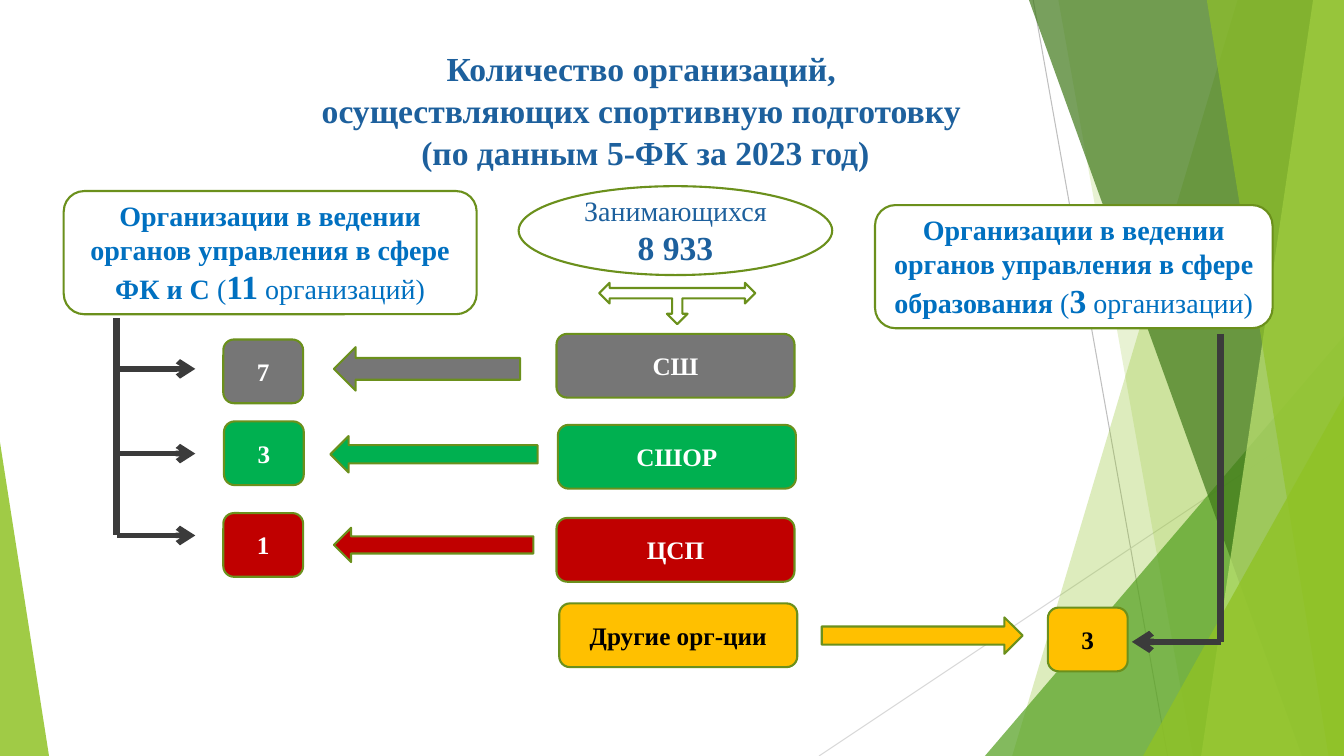
from dataclasses import dataclass

from lxml import etree
from pptx import Presentation
from pptx.dml.color import RGBColor
from pptx.enum import shapes, text
from pptx.oxml import ns
from pptx.util import Pt

KIND = shapes.MSO_SHAPE


@dataclass(frozen=True)
class Theme:
    font: str = "Times New Roman"
    title: str = "1D609D"
    head: str = "0070C0"
    edge: str = "6B901C"
    rod: str = "3B3B3B"
    white: str = "FFFFFF"
    black: str = "000000"
    gray: str = "767676"
    green: str = "00B050"
    red: str = "C00000"
    gold: str = "FFC000"
    lime: str = "90C226"
    leaf: str = "54A021"
    moss: str = "3F7819"
    pale: str = "C0E474"
    big: int = 24
    mid: int = 20
    small: int = 18


T = Theme()


def rgb(code):
    return RGBColor.from_string(code)


def write(frame, paras, size, color, bold=True, anchor=text.MSO_ANCHOR.MIDDLE, gap=None):
    """Each paragraph is a list of (words, changes) runs; a newline breaks a line."""
    frame.word_wrap = True
    frame.auto_size = text.MSO_AUTO_SIZE.NONE
    frame.vertical_anchor = anchor
    for i, runs in enumerate(paras):
        para = frame.paragraphs[0] if i == 0 else frame.add_paragraph()
        para.alignment = text.PP_ALIGN.CENTER
        para.line_spacing = gap
        for words, new in runs:
            for j, line in enumerate(words.split("\n")):
                if j:
                    para.add_line_break()
                run = para.add_run()
                run.text = line
                font = run.font
                font.name = T.font
                font.size = Pt(new.get("size", size))
                font.bold = new.get("bold", bold)
                font.color.rgb = rgb(color)


def paint(item, fill, alpha=None, edge=None):
    item.shadow.inherit = False
    item.fill.solid()
    item.fill.fore_color.rgb = rgb(fill)
    if alpha:
        tint = item.element.spPr.find(".//" + ns.qn("a:srgbClr"))
        etree.SubElement(tint, ns.qn("a:alpha"), val=str(alpha * 1000))
    if edge:
        item.line.color.rgb = rgb(edge)
        item.line.width = Pt(1.5)
    else:
        item.line.fill.background()
    return item


def block(slide, kind, box, fill=T.white, **look):
    item = slide.shapes.add_shape(kind, *map(Pt, box))
    return paint(item, fill, **{"edge": T.edge, **look})


def rule(slide, start, end, color, width, arrow=False):
    line = slide.shapes.add_connector(
        shapes.MSO_CONNECTOR.STRAIGHT, *map(Pt, (*start, *end)))
    line.line.color.rgb = rgb(color)
    line.line.width = Pt(width)
    if arrow:
        etree.SubElement(line.line._get_or_add_ln(), ns.qn("a:tailEnd"), type="arrow")
    etree.SubElement(line.element.spPr, ns.qn("a:effectLst"))


def facets(slide, box):
    """Green translucent bands along the right side and a wedge at the left."""
    left, top, wide, high = box
    right, foot = left + wide, top + high

    def band(upper, lower, fill, alpha):
        form = slide.shapes.build_freeform(right - upper, top, scale=Pt(1))
        form.add_line_segments(
            [(right, top), (right, foot), (right - lower, foot)], close=True)
        paint(form.convert_to_shape(), fill, alpha)

    def wedge(x, width, height, peak, fill, alpha):
        part = block(slide, KIND.ISOSCELES_TRIANGLE, (x, foot - height, width, height),
                     fill, alpha=alpha, edge=None)
        part.adjustments[0] = peak

    rule(slide, (right - 222, top), (right - 126, foot), "BFBFBF", 0.75)
    rule(slide, (right, top + 290), (right - 375, foot), "D9D9D9", 0.75)
    band(76, 237, T.lime, 30)
    band(204, 108, T.lime, 20)
    wedge(right - 256.5, 256.5, 300, 1, T.leaf, 72)
    band(225, 30.5, T.moss, 70)
    band(22, 101.5, T.pale, 70)
    band(98.5, 11, T.lime, 65)
    wedge(right - 143.5, 143.5, 257, 1, T.lime, 80)
    wedge(left, 35, 224, 0, T.lime, 85)


def title(slide, box):
    item = slide.shapes.title
    item.left, item.top, item.width, item.height = map(Pt, box)
    words = ("Количество организаций, \nосуществляющих спортивную подготовку \n"
             "(по данным 5-ФК за 2023 год)")
    write(item.text_frame, [[(words, {})]], T.big, T.title,
          anchor=text.MSO_ANCHOR.TOP, gap=1.05)
    slide.shapes.element.append(item.element)


def total(slide, box):
    left, top, wide, high = box
    oval = block(slide, KIND.OVAL, (left, top, wide, 63.5))
    write(oval.text_frame,
          [[("Занимающихся", {})], [("8 933", {"size": T.big, "bold": True})]],
          T.mid, T.title, bold=False)
    fork = block(slide, KIND.LEFT_RIGHT_UP_ARROW,
                 (left + 57.5, top + high - 29.5, 111.5, 29.5))
    fork.rotation = 180


def header(slide, box, words, count, unit):
    item = block(slide, KIND.ROUNDED_RECTANGLE, box)
    plain = {"bold": False}
    runs = [(words, {}), ("(", plain), (count, {"size": T.big}), (unit, plain)]
    write(item.text_frame, [runs], T.mid, T.head)


def rack(slide, box, rungs, width, flip=False):
    """A stem at one side of the box with an arrow at each rung."""
    left, top, wide, high = box
    stem, tip = (left + wide, left) if flip else (left, left + wide)
    rule(slide, (stem, top), (stem, top + high), T.rod, 5)
    for y in rungs:
        rule(slide, (stem, top + y), (tip, top + y), T.rod, width, arrow=True)


def row(slide, box, name, count, fill, tile, arrow, ink=T.white, kind=KIND.LEFT_ARROW):
    """A named type, an arrow and its count; tile and arrow are offsets from the box."""
    left, top, wide, high = box
    dx, dy = tile
    for words, spot in ((count, (left + dx, top + dy, 57, high)), (name, box)):
        item = block(slide, KIND.ROUNDED_RECTANGLE, spot, fill)
        write(item.text_frame, [[(words, {})]], T.small, ink)
    dx, dy, *size = arrow
    block(slide, kind, (left + dx, top + dy, *size), fill)


def main():
    deck = Presentation()
    deck.slide_width, deck.slide_height = Pt(960), Pt(540)
    slide = deck.slides.add_slide(deck.slide_layouts[5])
    facets(slide, (0, 0, 960, 540))
    title(slide, (84, 29, 754, 104))
    total(slide, (370.5, 133, 224, 98.5))
    stem = "Организации в ведении органов управления в сфере "
    header(slide, (45.5, 136.5, 295, 88), stem + "ФК и С ", "11", " организаций)")
    header(slide, (625, 146.5, 284, 88), stem + "образования ", "3", " организации)")
    rack(slide, (83.5, 227.5, 56, 155), (36, 96.5, 155), 4)
    rack(slide, (808.5, 238.5, 63.5, 220), (220,), 4.5, flip=True)
    row(slide, (397.5, 238.5, 170, 45.5), "СШ", "7", T.gray,
        (-238, 4), (-159, 9.5, 133, 31))
    row(slide, (398.5, 303.5, 170, 45.5), "СШОР", "3", T.green,
        (-238.5, -2.5), (-162.5, 8, 148, 26))
    row(slide, (397.5, 370, 170, 45.5), "ЦСП", "1", T.red,
        (-238, -3.5), (-159, 7, 142.5, 24.5))
    row(slide, (399.5, 431, 170, 45.5), "Другие орг-ции", "3", T.gold,
        (349, 3), (187.5, 10, 143.5, 26), T.black, KIND.RIGHT_ARROW)
    deck.save("out.pptx")


if __name__ == "__main__":
    main()
